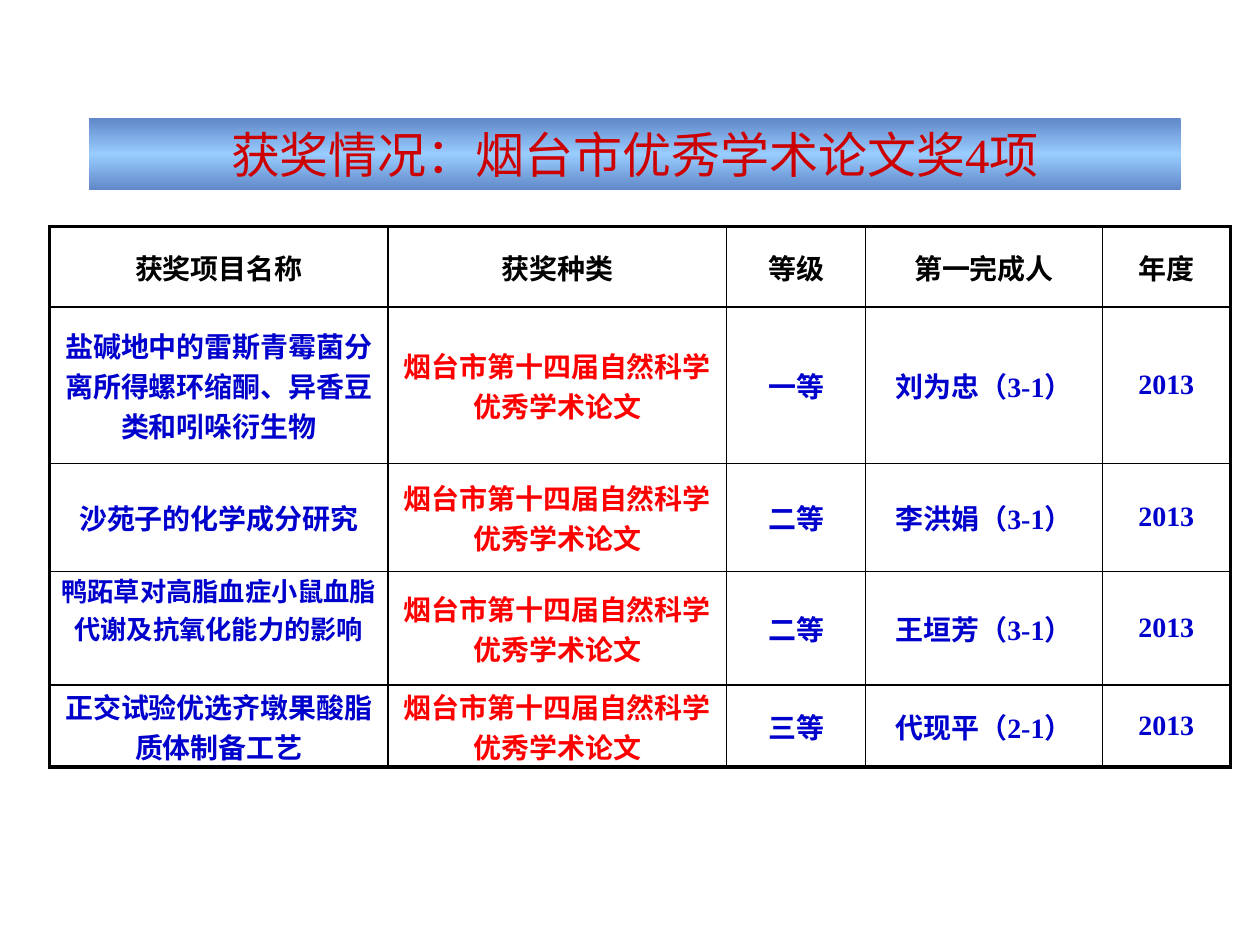
import copy
import lxml.etree
import pptx
import pptx.util
import pptx.dml.color
import pptx.enum.text
import pptx.oxml.ns

Pt = pptx.util.Pt
RGB = pptx.dml.color.RGBColor
MIDDLE = pptx.enum.text.MSO_ANCHOR.MIDDLE
TOP = pptx.enum.text.MSO_ANCHOR.TOP
CENTER = pptx.enum.text.PP_ALIGN.CENTER
qn = pptx.oxml.ns.qn

BLACK = RGB(0x00, 0x00, 0x00)
BLUE = RGB(0x00, 0x00, 0xCC)
RED = RGB(0xFF, 0x00, 0x00)
CRIMSON = RGB(0xCC, 0x00, 0x00)
STEEL = RGB(0x60, 0x88, 0xC8)
SKY = RGB(0x99, 0xCC, 0xFF)
FACE = "Times New Roman"


def style(par, size, color, bold):
    par.alignment = CENTER
    par.font.name = FACE
    par.font.size = Pt(size)
    par.font.bold = bold
    par.font.color.rgb = color


def border(cell, side, width):
    props = cell._tc.get_or_add_tcPr()
    line = lxml.etree.SubElement(props, qn("a:" + side), w=str(Pt(width)))
    fill = lxml.etree.SubElement(line, qn("a:solidFill"))
    lxml.etree.SubElement(fill, qn("a:srgbClr"), val=str(BLACK))


deck = pptx.Presentation()
deck.slide_width, deck.slide_height = Pt(720), Pt(540)
slide = deck.slides.add_slide(deck.slide_layouts[5])

title = slide.shapes.title
title.left, title.top, title.width, title.height = Pt(50.7), Pt(67.6), Pt(624), Pt(41)
title.fill.gradient()
title.fill.gradient_angle = 90
for stop, color in zip(title.fill.gradient_stops, (STEEL, SKY)):
    stop.color.rgb = color
title.fill.gradient_stops[1].position = 0.5
stops = title._element.spPr.find(".//" + qn("a:gsLst"))
last = copy.deepcopy(stops[0])
last.set("pos", "100000")
stops.append(last)
frame = title.text_frame
frame.text = "获奖情况：烟台市优秀学术论文奖4项"
frame.auto_size = pptx.enum.text.MSO_AUTO_SIZE.NONE
frame.word_wrap = True
frame.vertical_anchor = MIDDLE
style(frame.paragraphs[0], 28, CRIMSON, False)

PRIZE = "烟台市第十四届自然科学优秀学术论文"
YEAR = "2013"
rows = [
    ("获奖项目名称", "获奖种类", "等级", "第一完成人", "年度"),
    ("盐碱地中的雷斯青霉菌分离所得螺环缩酮、异香豆类和吲哚衍生物", PRIZE, "一等", "刘为忠（3-1）", YEAR),
    ("沙苑子的化学成分研究", PRIZE, "二等", "李洪娟（3-1）", YEAR),
    ("鸭跖草对高脂血症小鼠血脂代谢及抗氧化能力的影响", PRIZE, "二等", "王垣芳（3-1）", YEAR),
    ("正交试验优选齐墩果酸脂质体制备工艺", PRIZE, "三等", "代现平（2-1）", YEAR),
]
widths = [193.5, 193.5, 79.4, 135.2, 73.2]
heights = [46, 89.4, 61.7, 65, 46.8]
end_row, end_col = len(rows) - 1, len(widths) - 1

table = slide.shapes.add_table(
    len(rows), len(widths), Pt(28.3), Pt(129.5), Pt(sum(widths)), Pt(sum(heights))
).table
table.first_row = table.horz_banding = False
for col, width in zip(table.columns, widths):
    col.width = Pt(width)
for row, height in zip(table.rows, heights):
    row.height = Pt(height)

for r, row in enumerate(rows):
    for c, text in enumerate(row):
        cell = table.cell(r, c)
        cell.text = text
        small = (r, c) == (3, 0)
        cell.vertical_anchor = TOP if small else MIDDLE
        cell.margin_left = cell.margin_right = Pt(5)
        cell.margin_top = cell.margin_bottom = 0
        color = BLACK if r == 0 else RED if c == 1 else BLUE
        style(cell.text_frame.paragraphs[0], 15 if small else 16, color, True)
        outer = {"lnL": c == 0, "lnR": c == end_col, "lnT": r == 0, "lnB": r == end_row}
        for side, edge in outer.items():
            border(cell, side, 2.25 if edge else 1)
        cell.fill.background()

deck.save("out.pptx")
